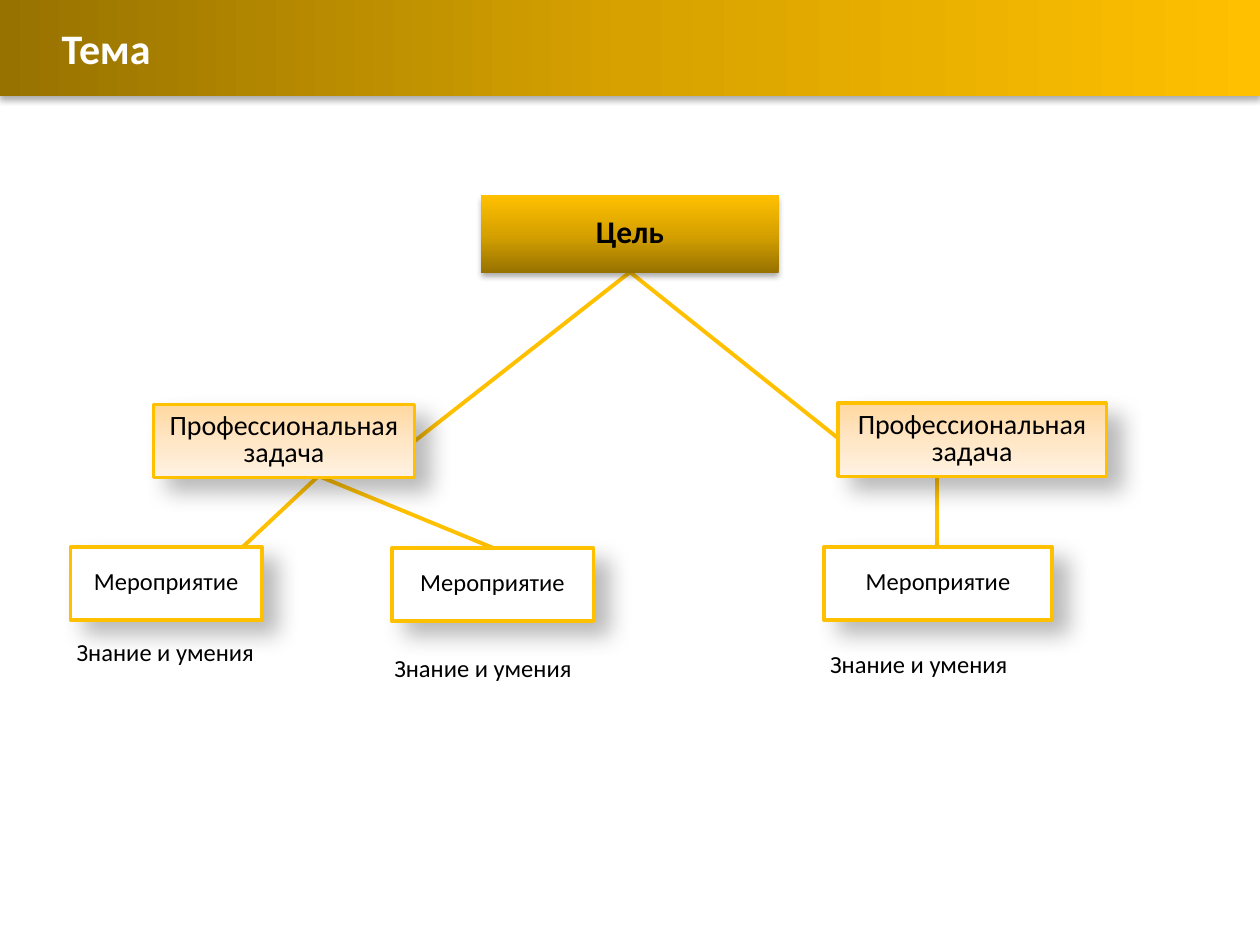
from copy import deepcopy

from lxml.etree import SubElement
from pptx import Presentation
from pptx.dml.color import RGBColor
from pptx.enum.shapes import MSO_CONNECTOR, MSO_SHAPE
from pptx.enum.text import MSO_ANCHOR as ANCHOR, PP_ALIGN as ALIGN
from pptx.oxml.ns import qn
from pptx.util import Pt

COLORS = {
    "gold": "FFC000", "mid_gold": "D7A200", "dark_gold": "977200",
    "peach": "FFD8A0", "mid_peach": "FFE6C5", "pale_peach": "FFF2E3",
    "white": "FFFFFF", "black": "000000",
}
GOLD = ("dark_gold", "mid_gold", "gold")
PEACH = ("peach", "mid_peach", "pale_peach")
BAR_SHADOW = (32, 3.5, 2.2, 90)
BOX_SHADOW = (28, 13, 11, 41)

LINKS = [
    (95, 353.5, 182, 272),
    (535.5, 353.5, 535.5, 230.5),
    (281.5, 313, 182, 272),
    (479, 250.5, 360, 155.5),
    (237, 252, 360, 155.5),
]
TASKS = [(87.8, 231.1, 149, 41.8), (478.8, 230.4, 153.4, 41.8)]
EVENTS = [
    (40.3, 312.5, 109.4, 41.8),
    (470.9, 312.5, 130.3, 41.8),
    (223.9, 313.2, 115.2, 41.8),
]
SKILLS = [
    (36.7, 363.6, 181.4, 45.4),
    (467.3, 370.8, 249.1, 76.3),
    (218.2, 373, 181.4, 39.6),
]


def rgb(name):
    """Return the named colour."""
    return RGBColor.from_string(COLORS[name])


def set_gradient(s, names, angle):
    """Fill a shape with three even stops at a counter-clockwise angle."""
    s.fill.gradient()
    s.fill.gradient_angle = angle
    stops = s._element.spPr.find(".//" + qn("a:gsLst"))
    stops.append(deepcopy(stops[0]))
    for i, (stop, name) in enumerate(zip(s.fill.gradient_stops, names)):
        stop.color.rgb = rgb(name)
        stop.position = i / 2


def set_shadow(s, alpha, blur, distance, direction):
    """Give a shape a soft black outer shadow."""
    s.shadow.inherit = False
    effects = s._element.spPr.find(qn("a:effectLst"))
    shadow = SubElement(
        effects, qn("a:outerShdw"), blurRad=str(Pt(blur)), dist=str(Pt(distance)),
        dir=str(direction * 60000), algn="ctr", rotWithShape="0")
    color = SubElement(shadow, qn("a:srgbClr"), val=COLORS["black"])
    SubElement(color, qn("a:alpha"), val=str(alpha * 1000))


def set_text(s, text, size, color="black", bold=False, align=ALIGN.CENTER, spacing=0.8):
    """Write one paragraph into a shape."""
    tf = s.text_frame
    tf.word_wrap = True
    p = tf.paragraphs[0]
    p.text = text
    p.alignment = align
    p.line_spacing = spacing
    p.font.name = "Calibri"
    p.font.size = Pt(size)
    p.font.bold = bold
    p.font.color.rgb = rgb(color)


def add_box(slide, box, shadow, outlined=True):
    """Add a shadowed white rectangle, with a gold outline if asked."""
    s = slide.shapes.add_shape(MSO_SHAPE.RECTANGLE, *map(Pt, box))
    s.fill.solid()
    s.fill.fore_color.rgb = rgb("white")
    if outlined:
        s.line.color.rgb = rgb("gold")
        s.line.width = Pt(2)
    else:
        s.line.fill.background()
    set_shadow(s, *shadow)
    s.text_frame.vertical_anchor = ANCHOR.MIDDLE
    return s


def add_link(slide, points):
    """Add a straight gold connector."""
    s = slide.shapes.add_connector(MSO_CONNECTOR.STRAIGHT, *map(Pt, points))
    s.line.color.rgb = rgb("gold")
    s.line.width = Pt(2.25)
    SubElement(s._element.spPr, qn("a:effectLst"))


def add_label(slide, box, text):
    """Add a left-aligned text box."""
    s = slide.shapes.add_textbox(*map(Pt, box))
    set_text(s, text, 14, align=ALIGN.LEFT)


def main():
    """Build the goal tree slide."""
    prs = Presentation()
    prs.slide_width, prs.slide_height = Pt(720), Pt(540)
    slide = prs.slides.add_slide(prs.slide_layouts[6])

    for points in LINKS:
        add_link(slide, points)

    header = add_box(slide, (0, 0, 720, 54.7), BAR_SHADOW, outlined=False)
    set_gradient(header, GOLD, 0)
    header.text_frame.margin_left = Pt(35.3)
    set_text(header, "Тема", 24, "white", True, ALIGN.LEFT, 1.0)

    goal = add_box(slide, (275, 111.6, 170, 44.3), BAR_SHADOW, outlined=False)
    set_gradient(goal, GOLD, 90)
    set_text(goal, "Цель", 18, bold=True)

    for box in TASKS:
        task = add_box(slide, box, BOX_SHADOW)
        set_gradient(task, PEACH, 270)
        set_text(task, "Профессиональная задача", 16)
    for box in EVENTS:
        set_text(add_box(slide, box, BOX_SHADOW), "Мероприятие", 14)
    for box in SKILLS:
        add_label(slide, box, "Знание и умения")

    prs.save("out.pptx")


if __name__ == "__main__":
    main()
